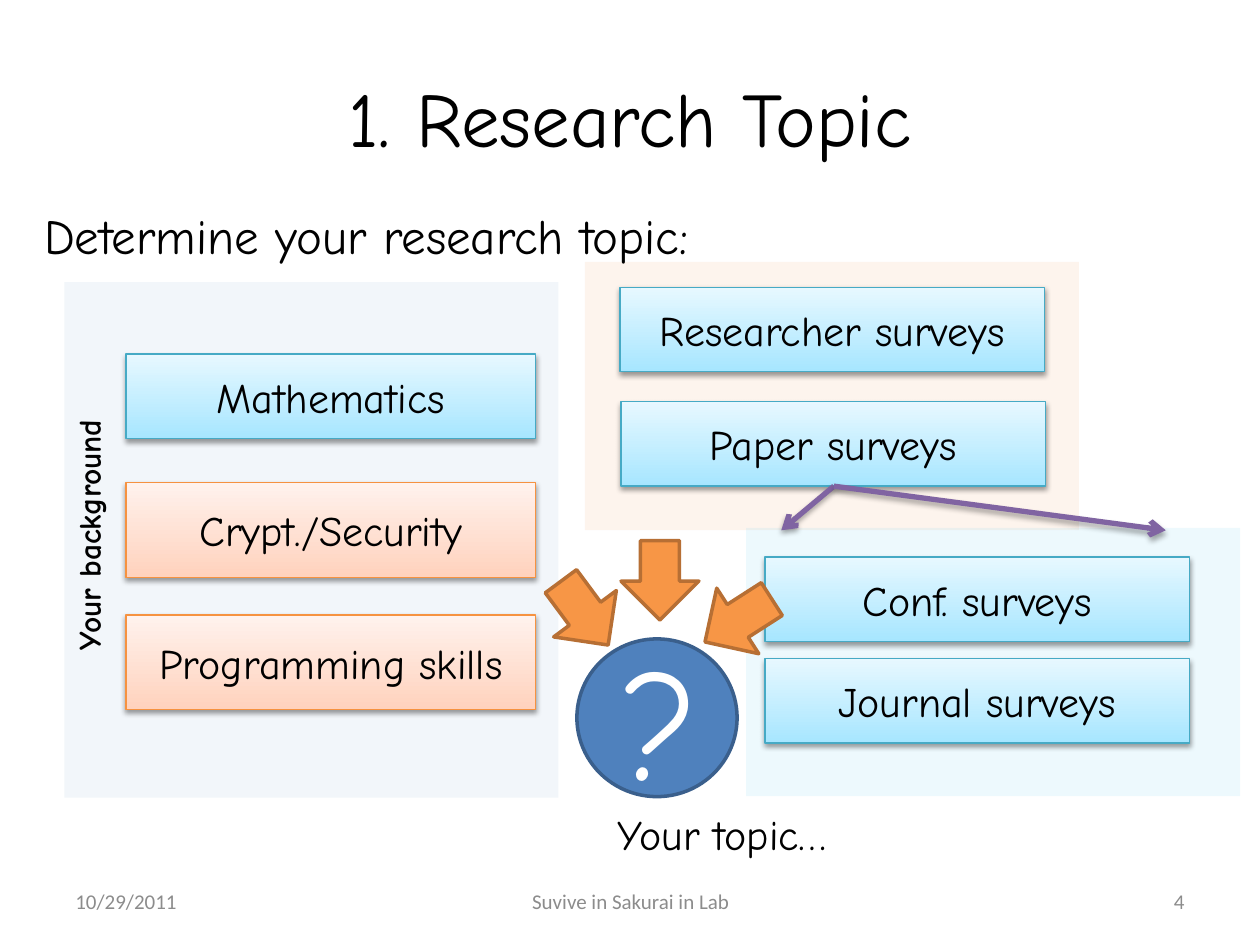
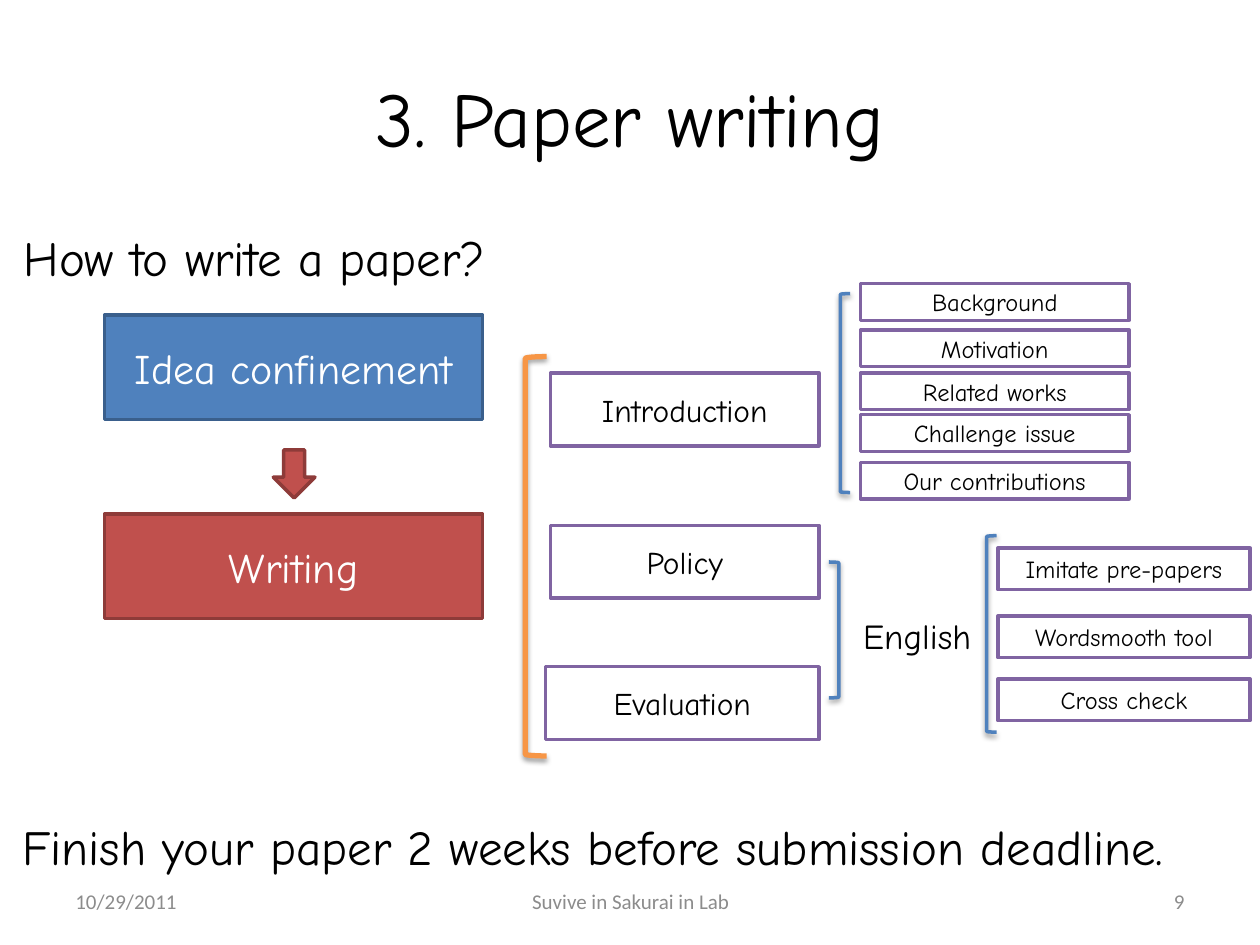
import lxml.etree
import pptx
import pptx.dml.color
import pptx.enum.shapes
import pptx.enum.text
import pptx.oxml.ns
import pptx.util

Cm, Pt = pptx.util.Cm, pptx.util.Pt
SHAPE = pptx.enum.shapes.MSO_SHAPE
ALIGN = pptx.enum.text.PP_ALIGN
ANCHOR = pptx.enum.text.MSO_ANCHOR
qn = pptx.oxml.ns.qn

COLORS = {
    "black": "000000", "white": "FFFFFF", "grey": "8C8C8C",
    "blue": "4F81BD", "blue edge": "3A5F8C", "sky": "00B0F0",
    "red": "C0504D", "red edge": "8E3B39", "purple": "8064A2",
    "orange": "F79646", "orange edge": "B76F34", "rust": "E46C0A",
    "aqua deep": "A7E6FF", "aqua pale": "E7F8FF", "aqua edge": "46AAC5",
    "peach deep": "FFD2BD", "peach pale": "FFF2ED", "peach edge": "F69240",
}
HAND_FONT, FOOTER_FONT = "Comic Neue", "Calibri"

# All places are left, top, width, height in centimetres.
TITLE_PLACE = (1.27, 0.76, 22.86, 3.18)
FOOTER_TOP, FOOTER_HEIGHT = 17.65, 1.02
FOOTER_DATE, FOOTER_TEXT = "10/29/2011", "Suvive in Sakurai in Lab"

# Research topic
TOPIC_LABELS = [
    ("Determine your research topic:", (0.64, 4.01, 15.11, 1.45), 28),
    ("Your topic…", (12.19, 16.18, 5.18, 1.27), 24),
]
PANELS = [
    ("rust", (11.79, 5.28, 9.96, 5.41)),
    ("blue", (1.3, 5.69, 9.96, 10.39)),
    ("sky", (15.04, 10.64, 9.96, 5.41)),
]
BACKGROUND_PLACE = (1.27, 8, 1.27, 5.36)
SKILLS = [
    ("Mathematics", "aqua", (2.54, 7.14, 8.26, 1.7)),
    ("Crypt./Security", "peach", (2.54, 9.73, 8.26, 1.91)),
    ("Programming skills", "peach", (2.54, 12.4, 8.26, 1.91)),
]
SURVEY_SIZE = (8.56, 1.7)
SURVEYS = [
    ("Paper surveys", (12.52, 8.1)),
    ("Researcher surveys", (12.5, 5.79)),
    ("Conf. surveys", (15.42, 11.23)),
    ("Journal surveys", (15.42, 13.28)),
]
BRANCH_START = (16.81, 9.8)
BRANCH_ENDS = [(15.75, 10.69), (23.5, 10.69)]
TOPIC_CIRCLE = (11.63, 12.88, 3.23, 3.18)
QUESTION_PLACE = (12.27, 12.5, 2.16, 4.01)
ARROW_SIZE = (1.57, 1.6)
TOPIC_ARROWS = [((12.52, 10.9), 0), ((11, 11.56), 323.5), ((14.1, 11.71), 57.3)]

# Paper writing
WRITING_LABELS = [
    ("English", (17.15, 12.27, 2.87, 1.12), 20),
    ("How to write a paper?", (0.23, 4.47, 10.77, 1.45), 28),
    ("Finish your paper 2 weeks before submission deadline.",
     (0.2, 16.33, 25.68, 1.45), 28),
]
STEPS = [("Idea confinement", "blue", 6.35), ("Writing", "red", 10.36)]
STEP_ARROW = (5.51, 9.07, 0.84, 0.97)
SECTIONS = [
    ("Introduction", (11.1, 7.52, 5.41, 1.47)),
    ("Policy", (11.1, 10.59, 5.41, 1.47)),
    ("Evaluation", (11, 13.44, 5.51, 1.47)),
]
DETAIL_COLUMNS = [
    {"left": 17.35, "width": 5.41, "height": 0.74,
     "items": [("Background", 5.72), ("Motivation", 6.65), ("Related works", 7.52),
               ("Challenge issue", 8.36), ("Our contributions", 9.32)]},
    {"left": 20.12, "width": 5.08, "height": 0.84,
     "items": [("Imitate pre-papers", 11.05), ("Wordsmooth tool", 12.42),
               ("Cross check", 13.69)]},
]
BRACKETS = [
    (SHAPE.LEFT_BRACKET, (10.59, 7.19, 0.43, 8.05), "orange", 3),
    (SHAPE.LEFT_BRACKET, (16.94, 5.92, 0.2, 4.01), "blue", 2),
    (SHAPE.RIGHT_BRACKET, (16.71, 11.33, 0.2, 2.74), "blue", 2),
    (SHAPE.LEFT_BRACKET, (19.89, 10.8, 0.2, 3.96), "blue", 2),
]


def rgb(name):
    return pptx.dml.color.RGBColor.from_string(COLORS[name])


def lengths(place):
    return [Cm(value) for value in place]


def write(box, text, size, color="black", align=ALIGN.CENTER, font=HAND_FONT, bold=False):
    para = box.text_frame.paragraphs[0]
    para.alignment = align
    span = para.add_run()
    span.text = text
    span.font.name, span.font.size, span.font.bold = font, Pt(size), bold
    span.font.color.rgb = rgb(color)


def add_frame(page, place, text, size, **style):
    """Add wrapped text, centred vertically in a fixed box."""
    box = page.shapes.add_textbox(*lengths(place))
    box.text_frame.word_wrap = True
    box.text_frame.vertical_anchor = ANCHOR.MIDDLE
    write(box, text, size, **style)


def add_label(page, text, place, size, **style):
    """Add one line of text whose box fits it."""
    box = page.shapes.add_textbox(*lengths(place))
    box.text_frame.word_wrap = False
    box.text_frame.auto_size = pptx.enum.text.MSO_AUTO_SIZE.SHAPE_TO_FIT_TEXT
    write(box, text, size, align=ALIGN.LEFT, **style)
    return box


def cast_shadow(shape, opacity, distance):
    properties = shape._element.spPr
    effects = properties.find(qn("a:effectLst"))
    if effects is None:
        effects = lxml.etree.SubElement(properties, qn("a:effectLst"))
    shadow = lxml.etree.SubElement(
        effects, qn("a:outerShdw"), blurRad=str(Pt(3.1)), dist=str(Pt(distance)),
        dir="5400000", rotWithShape="0")
    color = lxml.etree.SubElement(shadow, qn("a:srgbClr"), val=COLORS["black"])
    lxml.etree.SubElement(color, qn("a:alpha"), val=str(opacity * 1000))


def add_block(page, kind, place, fill=None, edge=None, width=2):
    shape = page.shapes.add_shape(kind, *lengths(place))
    shape.shadow.inherit = False
    if fill:
        shape.fill.solid()
        shape.fill.fore_color.rgb = rgb(fill)
    else:
        shape.fill.background()
    if edge:
        shape.line.color.rgb = rgb(edge)
        shape.line.width = Pt(width)
    else:
        shape.line.fill.background()
    shape.text_frame.vertical_anchor = ANCHOR.MIDDLE
    return shape


def add_panel(page, color, place):
    panel = add_block(page, SHAPE.RECTANGLE, place, color)
    tint = panel._element.spPr.find(qn("a:solidFill"))[0]
    lxml.etree.SubElement(tint, qn("a:alpha"), val="7000")


def add_glossy(page, text, tone, place):
    """Add a shadowed box that fades from deep at its foot to pale."""
    box = add_block(page, SHAPE.FLOWCHART_PROCESS, place, edge=tone + " edge", width=0.75)
    box.fill.gradient()
    box.fill.gradient_angle = 90
    for stop, shade in zip(box.fill.gradient_stops, (" deep", " pale")):
        stop.color.rgb = rgb(tone + shade)
    cast_shadow(box, 38, 1.6)
    write(box, text, 24)


def add_outlined(page, text, place, size):
    write(add_block(page, SHAPE.RECTANGLE, place, "white", "purple"), text, size)


def add_branch(page, start, end):
    branch = page.shapes.add_connector(
        pptx.enum.shapes.MSO_CONNECTOR.STRAIGHT, *lengths(start + end))
    branch.line.color.rgb = rgb("purple")
    branch.line.width = Pt(3)
    outline = branch._element.spPr.find(qn("a:ln"))
    lxml.etree.SubElement(outline, qn("a:tailEnd"), type="arrow")
    cast_shadow(branch, 35, 1.8)


def start_page(deck, title, number):
    """Add a page with its title and footer."""
    page = deck.slides.add_slide(deck.slide_layouts[6])
    add_frame(page, TITLE_PLACE, title, 44)
    footer = [(1.27, 5.92, FOOTER_DATE, ALIGN.LEFT),
              (8.69, 8.05, FOOTER_TEXT, ALIGN.CENTER),
              (18.21, 5.92, number, ALIGN.RIGHT)]
    for left, width, text, align in footer:
        add_frame(page, (left, FOOTER_TOP, width, FOOTER_HEIGHT), text, 12,
                  color="grey", align=align, font=FOOTER_FONT)
    return page


def build_topic(deck):
    page = start_page(deck, "1. Research Topic", "4")
    for panel in PANELS:
        add_panel(page, *panel)
    for label in TOPIC_LABELS:
        add_label(page, *label)
    background = add_label(page, "Your background", BACKGROUND_PLACE, 18, bold=True)
    background.rotation = 180
    background._element.txBody.find(qn("a:bodyPr")).set("vert", "eaVert")
    for skill in SKILLS:
        add_glossy(page, *skill)
    for text, corner in SURVEYS:
        add_glossy(page, text, "aqua", corner + SURVEY_SIZE)
    for end in BRANCH_ENDS:
        add_branch(page, BRANCH_START, end)
    add_block(page, SHAPE.OVAL, TOPIC_CIRCLE, "blue", "blue edge")
    add_label(page, "?", QUESTION_PLACE, 88, color="white")
    for corner, turn in TOPIC_ARROWS:
        arrow = add_block(page, SHAPE.DOWN_ARROW, corner + ARROW_SIZE, "orange", "orange edge")
        arrow.rotation = turn


def build_writing(deck):
    page = start_page(deck, "3. Paper writing", "9")
    for text, color, top in STEPS:
        step = add_block(page, SHAPE.RECTANGLE, (2.11, top, 7.62, 2.11), color, color + " edge")
        write(step, text, 24, color="white")
    add_block(page, SHAPE.DOWN_ARROW, STEP_ARROW, "red", "red edge")
    for kind, place, color, width in BRACKETS:
        bracket = add_block(page, kind, place, edge=color, width=width)
        cast_shadow(bracket, 38, 1.6)
    for text, place in SECTIONS:
        add_outlined(page, text, place, 18)
    for column in DETAIL_COLUMNS:
        for text, top in column["items"]:
            place = (column["left"], top, column["width"], column["height"])
            add_outlined(page, text, place, 14)
    for label in WRITING_LABELS:
        add_label(page, *label)


def main():
    deck = pptx.Presentation()
    deck.slide_width, deck.slide_height = Cm(25.4), Cm(19.05)
    build_topic(deck)
    build_writing(deck)
    deck.save("out.pptx")


if __name__ == "__main__":
    main()
